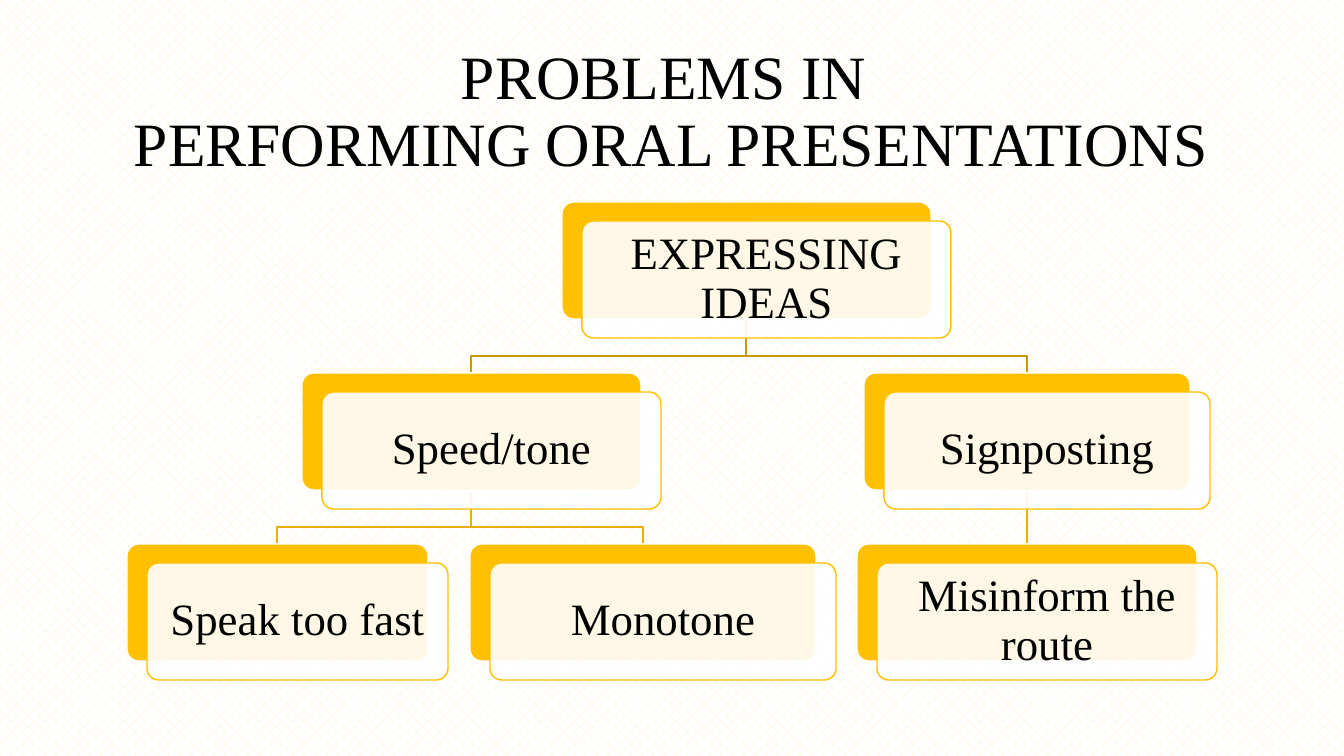
"""Build a slide with a three-level tree of oral presentation problems."""
from lxml import etree
from pptx import Presentation
from pptx.dml.color import RGBColor
from pptx.enum.dml import MSO_PATTERN
from pptx.enum.shapes import MSO_CONNECTOR, MSO_SHAPE
from pptx.enum.text import MSO_ANCHOR, PP_ALIGN
from pptx.oxml.ns import qn
from pptx.util import Pt

DOTS = MSO_PATTERN.PERCENT_25
STRAIGHT = MSO_CONNECTOR.STRAIGHT
ROUNDED = MSO_SHAPE.ROUNDED_RECTANGLE
MIDDLE = MSO_ANCHOR.MIDDLE
CENTER = PP_ALIGN.CENTER

FONT = "Times New Roman"
GOLD, WHITE, BLACK = "FFC000", "FFFFFF", "000000"
LINK_COLORS = ["CC9A00", "E7AE00"]
SLIDE_W, SLIDE_H = 1344, 756
CARD_H, LEVEL_STEP, BUS_GAP = 117, 171, 17
SHIFT_X, SHIFT_Y = 20, 19
TREE_TOP = 202

TREE = ("EXPRESSING IDEAS", 562, 369, [
    ("Speed/tone", 302, 339, [
        ("Speak too fast", 127, 301, []),
        ("Monotone", 470, 346, []),
    ]),
    ("Signposting", 864, 326, [
        ("Misinform the route", 857, 340, []),
    ]),
])


def px(n):
    """Convert slide pixels to EMU."""
    return round(n * 914400 / 100.8)


def rgb(color):
    """Turn a hex string into a colour."""
    return RGBColor.from_string(color)


def format_text(tf, size):
    """Centre a text frame and set its font."""
    tf.word_wrap = True
    tf.vertical_anchor = MIDDLE
    for p in tf.paragraphs:
        p.alignment = CENTER
        p.line_spacing = 0.9
        for r in p.runs:
            r.font.size = Pt(size)
            r.font.name = FONT
            r.font.color.rgb = rgb(BLACK)


def add_background(s):
    """Cover the slide with a pale dotted pattern."""
    fill = s.background.fill
    fill.patterned()
    fill.pattern = DOTS
    fill.fore_color.rgb = rgb("FFF2CC")
    fill.back_color.rgb = rgb(WHITE)


def add_title(s, x, y, w, h):
    """Place the title in the given box."""
    sp = s.shapes.title
    sp.left, sp.top, sp.width, sp.height = px(x), px(y), px(w), px(h)
    sp.text_frame.text = "PROBLEMS IN \vPERFORMING ORAL PRESENTATIONS"
    format_text(sp.text_frame, 44)


def add_link(s, x1, y1, x2, y2, color):
    """Join a parent's bottom to a child's top."""
    if x1 == x2:
        sp = s.shapes.add_connector(STRAIGHT, px(x1), px(y1), px(x2), px(y2))
        etree.SubElement(sp._element.spPr, qn("a:effectLst"))
    else:
        bus = y2 - BUS_GAP
        builder = s.shapes.build_freeform(px(x1), px(y1))
        points = [(x1, bus), (x2, bus), (x2, y2)]
        builder.add_line_segments([(px(x), px(y)) for x, y in points], close=False)
        sp = builder.convert_to_shape()
        sp.fill.background()
        sp.shadow.inherit = False
    sp.line.color.rgb = rgb(color)
    sp.line.width = Pt(1)


def add_panel(s, x, y, w, fill, line):
    """Add one rounded panel of a card."""
    sp = s.shapes.add_shape(ROUNDED, px(x), px(y), px(w), px(CARD_H))
    sp.adjustments[0] = 0.1
    sp.shadow.inherit = False
    sp.fill.solid()
    sp.fill.fore_color.rgb = rgb(fill)
    sp.line.color.rgb = rgb(line)
    sp.line.width = Pt(1)
    return sp


def add_card(s, text, x, y, w):
    """Add a gold panel with a translucent text panel over it."""
    add_panel(s, x, y, w, GOLD, WHITE)
    sp = add_panel(s, x + SHIFT_X, y + SHIFT_Y, w, WHITE, GOLD)
    color = sp._element.spPr.find(qn("a:solidFill")).find(qn("a:srgbClr"))
    etree.SubElement(color, qn("a:alpha"), val="90000")
    tf = sp.text_frame
    tf.margin_left = tf.margin_right = tf.margin_top = tf.margin_bottom = px(16)
    tf.text = text
    format_text(tf, 32)


def add_links(s, node, y, level=0):
    """Draw the links below a node and its descendants."""
    _, x, w, children = node
    below = y + LEVEL_STEP
    for child in children:
        add_links(s, child, below, level + 1)
        _, child_x, child_w, _ = child
        add_link(s, x + w // 2, y + CARD_H, child_x + child_w // 2, below,
                 LINK_COLORS[level])


def add_cards(s, node, y):
    """Draw the cards of a node and its descendants."""
    text, x, w, children = node
    add_card(s, text, x, y, w)
    for child in children:
        add_cards(s, child, y + LEVEL_STEP)


def main():
    """Build and save the presentation."""
    prs = Presentation()
    prs.slide_width, prs.slide_height = px(SLIDE_W), px(SLIDE_H)
    s = prs.slides.add_slide(prs.slide_layouts[5])
    add_background(s)
    add_title(s, 92, 40, 1159, 146)
    add_links(s, TREE, TREE_TOP)
    add_cards(s, TREE, TREE_TOP)
    prs.save("out.pptx")


if __name__ == "__main__":
    main()
